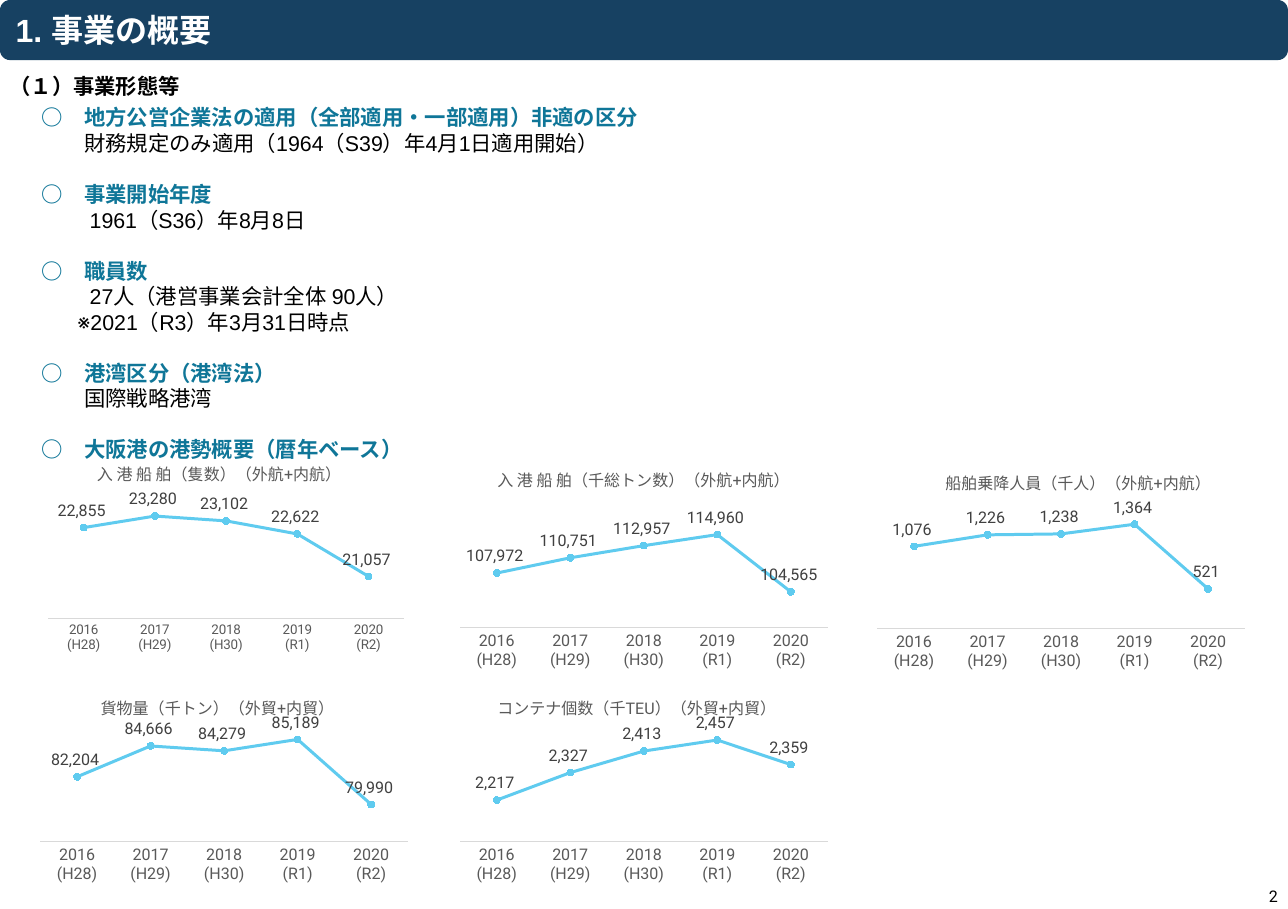
import pptx
import pptx.chart.data
import pptx.dml.color
import pptx.enum.chart
import pptx.enum.shapes
import pptx.enum.text
import pptx.oxml
import pptx.oxml.ns
import pptx.util

Pt = pptx.util.Pt
qn = pptx.oxml.ns.qn
XL = pptx.enum.chart

HUES = {
    "navy": "174162", "teal": "0F7698", "sky": "5FCBEF", "white": "FFFFFF",
    "black": "000000", "gray": "595959", "dark": "404040", "rule": "D9D9D9",
}
YEARS = ["2016\n(H28)", "2017\n(H29)", "2018\n(H30)", "2019\n(R1)", "2020\n(R2)"]
FORM = r"#,##0_);[Red]\(#,##0\)"


class Deck:
    def __init__(self, wide, high):
        self.file = pptx.Presentation()
        self.file.slide_width, self.file.slide_height = Pt(wide), Pt(high)
        self.slide = self.file.slides.add_slide(self.file.slide_layouts[6])
        self.anchor = pptx.enum.text.MSO_ANCHOR
        self.align = pptx.enum.text.PP_ALIGN

    def hue(self, name):
        return pptx.dml.color.RGBColor.from_string(HUES[name])

    def paint(self, fill, name):
        fill.solid()
        fill.fore_color.rgb = self.hue(name)

    def style(self, font, size, name, face="Roboto", bold=False):
        font.size, font.name, font.bold = Pt(size), face, bold
        font.color.rgb = self.hue(name)

    def run(self, para, text, size, name, face="Roboto", bold=False):
        run = para.add_run()
        run.text = text
        self.style(run.font, size, name, face, bold)
        return run

    def banner(self, box, text):
        kind = pptx.enum.shapes.MSO_SHAPE.ROUNDED_RECTANGLE
        shape = self.slide.shapes.add_shape(kind, *map(Pt, box))
        shape.adjustments[0] = 0.17
        shape.shadow.inherit = False
        self.paint(shape.fill, "navy")
        shape.line.fill.background()
        frame = shape.text_frame
        frame.margin_left = frame.margin_right = Pt(9.4)
        frame.vertical_anchor = self.anchor.MIDDLE
        para = frame.paragraphs[0]
        para.alignment = self.align.LEFT
        self.run(para, text, 24, "white", "Arial", True)

    def frame(self, box):
        frame = self.slide.shapes.add_textbox(*map(Pt, box)).text_frame
        frame.word_wrap = True
        return frame

    def label(self, box, text, size, bold=False, right=False):
        frame = self.frame(box)
        para = frame.paragraphs[0]
        if right:
            frame.vertical_anchor = self.anchor.MIDDLE
            para.alignment = self.align.RIGHT
        self.run(para, text, size, "black", bold=bold)

    def facts(self, box, items):
        frame = self.frame(box)
        for rank, (head, lines) in enumerate(items):
            para = frame.add_paragraph() if rank else frame.paragraphs[0]
            para.space_before = Pt(19 if rank else 0)
            run = self.run(para, "○　" + head, 16, "teal", bold=True)
            space = pptx.oxml.ns.nsdecls("a")
            latin = run.font._element.find(qn("a:latin"))
            latin.addnext(pptx.oxml.parse_xml(f'<a:ea {space} typeface="Roboto"/>'))
            for text, indent, face in lines:
                para = frame.add_paragraph()
                para.space_before = Pt(0)
                para._p.get_or_add_pPr().set("marL", str(Pt(indent)))
                self.run(para, text, 16, "black", face)

    def place(self, node, spot, index):
        old = node.find(qn("c:layout"))
        if old is not None:
            node.remove(old)
        inner = len(spot) == 4
        tags = [("layoutTarget", "inner")] if inner else []
        tags += [("xMode", "edge"), ("yMode", "edge"), *zip("xywh", spot)]
        body = "".join(f'<c:{tag} val="{value}"/>' for tag, value in tags)
        space = pptx.oxml.ns.nsdecls("c")
        node.insert(index, pptx.oxml.parse_xml(
            f"<c:layout {space}><c:manualLayout>{body}</c:manualLayout></c:layout>"))

    def trend(self, box, title, values, span, plot, spot, size=12):
        data = pptx.chart.data.CategoryChartData(number_format=FORM)
        data.categories = YEARS
        data.add_series("Series 1", values)
        kind = XL.XL_CHART_TYPE.LINE_MARKERS
        chart = self.slide.shapes.add_chart(kind, *map(Pt, box), data).chart
        self.style(chart.font, 10, "black")
        chart.has_legend = False
        chart.has_title = True
        para = chart.chart_title.text_frame.paragraphs[0]
        self.run(para, title, 12, "gray")
        self.place(chart.element.find(".//" + qn("c:title")), spot, 1)
        self.place(chart.element.find(".//" + qn("c:plotArea")), plot, 0)
        self.axes(chart, span, size)
        self.line(chart.plots[0])

    def axes(self, chart, span, size):
        axis = chart.value_axis
        axis.minimum_scale, axis.maximum_scale = span
        axis.has_major_gridlines = False
        axis.visible = False
        axis = chart.category_axis
        axis.major_tick_mark = axis.minor_tick_mark = XL.XL_TICK_MARK.NONE
        axis.format.line.width = Pt(0.75)
        axis.format.line.color.rgb = self.hue("rule")
        self.style(axis.tick_labels.font, size, "gray")

    def line(self, plot):
        plot.vary_by_categories = False
        series = plot.series[0]
        series.smooth = False
        series.format.line.width = Pt(2.25)
        series.format.line.color.rgb = self.hue("sky")
        mark = series.marker
        mark.style, mark.size = XL.XL_MARKER_STYLE.CIRCLE, 5
        self.paint(mark.format.fill, "sky")
        mark.format.line.color.rgb = self.hue("sky")
        labels = series.data_labels
        labels.show_value = True
        labels.position = XL.XL_LABEL_POSITION.ABOVE
        labels.number_format = FORM
        labels.number_format_is_linked = False
        self.style(labels.font, 12, "dark")


FACTS = [
    ("地方公営企業法の適用（全部適用・一部適用）非適の区分",
     [("財務規定のみ適用（1964（S39）年4月1日適用開始）", 32, "Arial")]),
    ("事業開始年度", [("1961（S36）年8月8日", 36, "Arial")]),
    ("職員数", [("27人（港営事業会計全体 90人）", 36, "Arial"),
              ("　※2021（R3）年3月31日時点", 11, "Arial")]),
    ("港湾区分（港湾法）", [("国際戦略港湾", 32, "Roboto")]),
    ("大阪港の港勢概要（暦年ベース）", []),
]
WIDE, LOW, TALL = 286.6, 153.4, 161.3
MID, ROW = 338.6, 510.6
FLAT = (0.02, 0.23, 0.96, 0.55)
TRENDS = [
    ((27.4, 342, WIDE, LOW), "入 港 船 舶（隻数）（外航+内航）",
     (22855, 23280, 23102, 22622, 21057), (19500, 23500),
     (0.03, 0.26, 0.93, 0.53), (0.15, 0), 10),
    ((MID, 342.7, WIDE, TALL), "入 港 船 舶（千総トン数）（外航+内航）",
     (107972, 110751, 112957, 114960, 104565), (98000, 116000),
     (0.02, 0.33, 0.96, 0.46), (0.11, 0.02)),
    ((24.5, ROW, WIDE, LOW), "貨物量（千トン）（外貿+内貿）",
     (82204, 84666, 84279, 85189, 79990), (77000, 86000), FLAT, (0.17, 0.04)),
    ((MID, ROW, WIDE, LOW), "コンテナ個数（千TEU）（外貿+内貿）",
     (2217, 2327, 2413, 2457, 2359), (2050, 2500), FLAT, (0.11, 0.04)),
    ((650.9, 343.4, WIDE, TALL), "船舶乗降人員（千人）（外航+内航）",
     (1076, 1226, 1238, 1364, 521), (0, 1600),
     (0.02, 0.22, 0.96, 0.57), (0.19, 0.03)),
]


def main():
    deck = Deck(964, 680.4)
    deck.banner((0, 0, 964, 45), "1. 事業の概要")
    deck.facts((24, 74.6, 870.5, 278.6), FACTS)
    deck.label((909.4, 661, 54, 19.4), "2", 12, right=True)
    deck.label((0, 51.1, 164.9, 26.6), "（１）事業形態等", 16, bold=True)
    for trend in TRENDS:
        deck.trend(*trend)
    deck.file.save("out.pptx")


if __name__ == "__main__":
    main()
